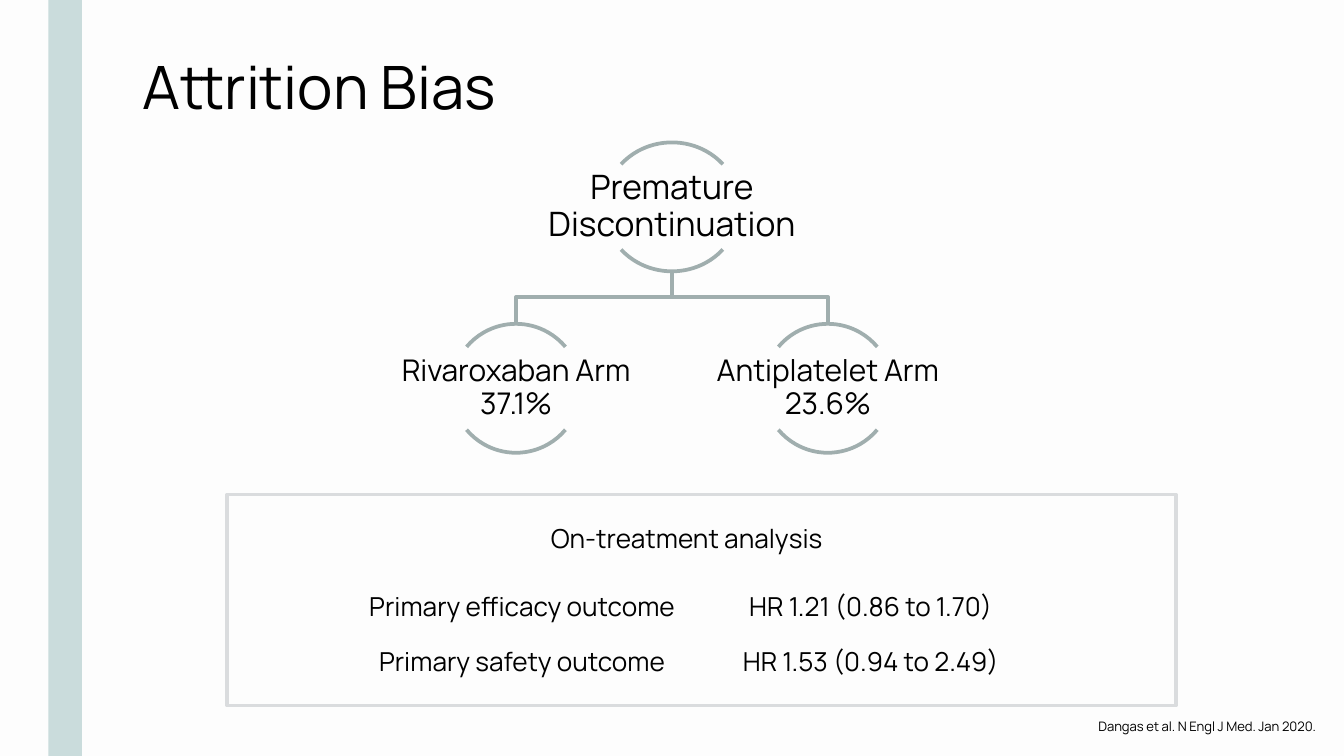
from pptx import Presentation
from pptx.dml.color import RGBColor
from pptx.enum.shapes import MSO_SHAPE as Shape
from pptx.enum.text import MSO_ANCHOR as Anchor, MSO_AUTO_SIZE as AutoSize, PP_ALIGN as Align
from pptx.util import Inches, Pt

SLIDE_WIDTH = 10
SLIDE_HEIGHT = SLIDE_WIDTH * 9 / 16
FONT = "Manrope"
BLACK, PAPER, BAND, BRANCH, FRAME = "000000", "FDFDFD", "CADCDC", "A0AEAE", "DADCDE"
PLAIN_TABLE = "{2D5ABB26-0587-4C30-8999-92F81FD0307C}"
ARC_UNITS_PER_DEGREE = 0.6
ARC_SPANS = [(220, 320), (40, 140)]

# centre x, top, circle width, circle height, label width, font size, label
ROOT = (5, 1.06, 1.01, 0.96, 2.01, 18, "Premature Discontinuation")
ARMS = [
    (3.84, 2.41, 0.96, 0.96, 1.91, 16, "Rivaroxaban Arm 37.1%"),
    (6.16, 2.41, 0.96, 0.96, 1.91, 16, "Antiplatelet Arm 23.6%"),
]
OUTCOMES = [
    ("Primary efficacy outcome", "HR 1.21 (0.86 to 1.70)"),
    ("Primary safety outcome", "HR 1.53 (0.94 to 2.49)"),
]


def color(hex_code):
    return RGBColor.from_string(hex_code)


def box(*lengths):
    return [Inches(length) for length in lengths]


def write(frame, text, size, align=Align.LEFT, spacing=None):
    frame.word_wrap = True
    paragraph = frame.paragraphs[0]
    paragraph.alignment = align
    paragraph.line_spacing = spacing
    run = paragraph.add_run()
    run.text = text
    run.font.name = FONT
    run.font.size = Pt(size)
    run.font.color.rgb = color(BLACK)


def add_title(slide, text):
    title = slide.shapes.title
    title.left, title.top, title.width, title.height = box(0.96, 0.32, 7.06, 0.64)
    title.text_frame.auto_size = AutoSize.NONE
    title.text_frame.vertical_anchor = Anchor.MIDDLE
    write(title.text_frame, text, 32)


def add_text(shapes, place, text, size, align=Align.LEFT):
    write(shapes.add_textbox(*box(*place)).text_frame, text, size, align)


def outline(shape, line_color):
    shape.shadow.inherit = False
    shape.fill.background()
    shape.line.color.rgb = color(line_color)
    shape.line.width = Pt(2)


def add_band(slide):
    band = slide.shapes.add_shape(Shape.RECTANGLE, *box(0.36, -0.05, 0.25, 5.73))
    band.shadow.inherit = False
    band.fill.solid()
    band.fill.fore_color.rgb = color(BAND)
    band.line.fill.background()


def add_branch(shapes, start, end):
    """Draw an elbow line that turns halfway down."""
    middle = (start[1] + end[1]) / 2
    corners = [(start[0], middle), (end[0], middle), end]
    builder = shapes.build_freeform(*box(*start))
    builder.add_line_segments([box(*corner) for corner in corners], close=False)
    outline(builder.convert_to_shape(), BRANCH)


def add_node(shapes, center, top, width, height, label_width, size, label):
    """Draw a label between the upper and lower arc of a circle."""
    for span in ARC_SPANS:
        arc = shapes.add_shape(Shape.ARC, *box(center - width / 2, top, width, height))
        for index, degrees in enumerate(span):
            arc.adjustments[index] = degrees * ARC_UNITS_PER_DEGREE
        outline(arc, BRANCH)

    label_height = 0.61
    label_top = top + (height - label_height) / 2
    place = box(center - label_width / 2, label_top, label_width, label_height)
    frame = shapes.add_textbox(*place).text_frame
    frame.margin_left = frame.margin_right = Inches(0.01)
    frame.margin_top = frame.margin_bottom = Inches(0.01)
    frame.vertical_anchor = Anchor.MIDDLE
    write(frame, label, size, Align.CENTER, spacing=0.9)


def add_hierarchy(slide):
    shapes = slide.shapes.add_group_shape().shapes
    root_bottom = (ROOT[0], 2.01)
    for arm in reversed(ARMS):
        add_branch(shapes, root_bottom, arm[:2])
    for node in [ROOT, *ARMS]:
        add_node(shapes, *node)


def add_outcomes(slide):
    widths, row_height = (2.57, 2.62), 0.41
    place = box(2.6, 4.33, sum(widths), row_height * len(OUTCOMES))
    graphic = slide.shapes.add_table(len(OUTCOMES), len(widths), *place)
    table = graphic.table
    table.first_row = table.horz_banding = False
    table._tbl.tblPr.find("{*}tableStyleId").text = PLAIN_TABLE
    for column, width in zip(table.columns, widths):
        column.width = Inches(width)
    for row, outcome in zip(table.rows, OUTCOMES):
        row.height = Inches(row_height)
        for cell, text in zip(row.cells, outcome):
            cell.fill.background()
            write(cell.text_frame, text, 14, Align.CENTER)


def main():
    deck = Presentation()
    deck.slide_width, deck.slide_height = box(SLIDE_WIDTH, SLIDE_HEIGHT)
    slide = deck.slides.add_slide(deck.slide_layouts[5])
    slide.background.fill.solid()
    slide.background.fill.fore_color.rgb = color(PAPER)

    add_band(slide)
    add_title(slide, "Attrition Bias")
    add_text(slide.shapes, (5.69, 5.3, 4.2, 0.22),
             "Dangas et al. N Engl J Med. Jan 2020.", 7, Align.RIGHT)
    add_hierarchy(slide)
    add_outcomes(slide)
    add_text(slide.shapes, (4, 3.84, 2.73, 0.34), "On-treatment analysis", 14)
    frame = slide.shapes.add_shape(Shape.RECTANGLE, *box(1.69, 3.68, 7.06, 1.57))
    outline(frame, FRAME)
    deck.save("out.pptx")


if __name__ == "__main__":
    main()
